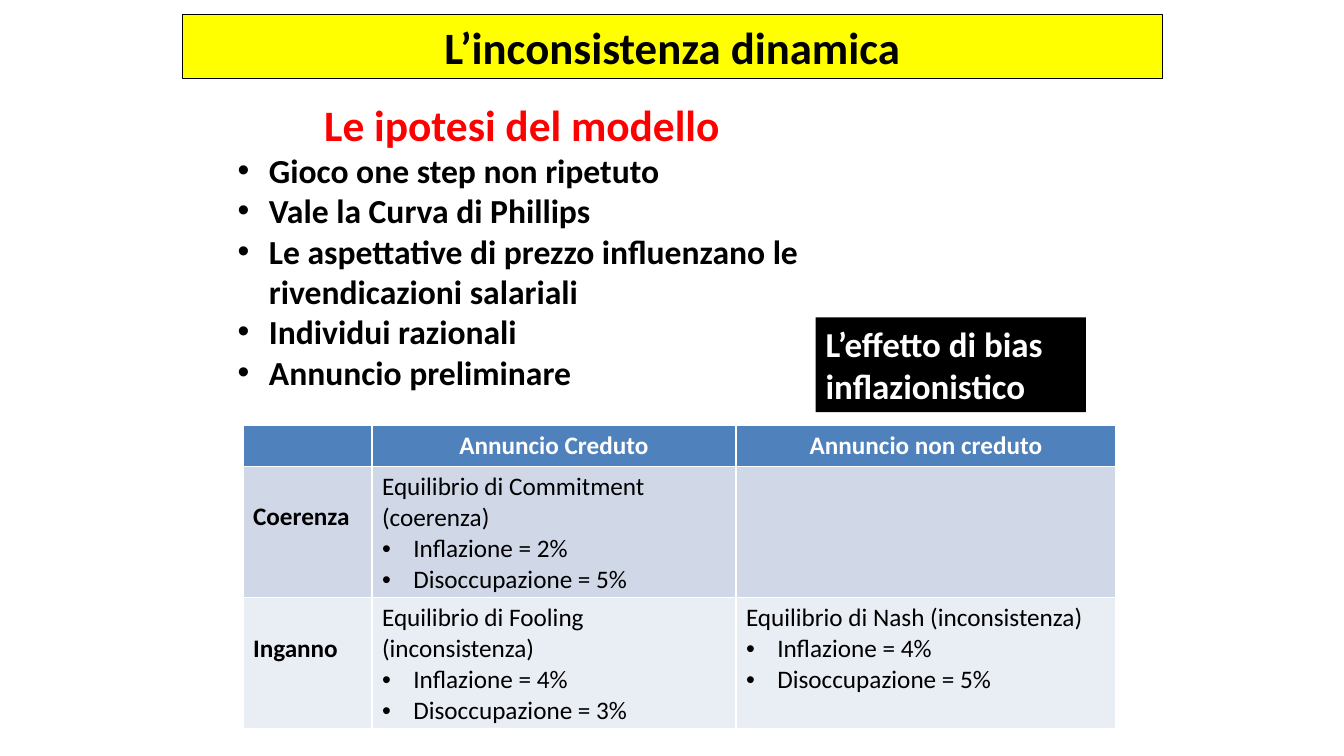
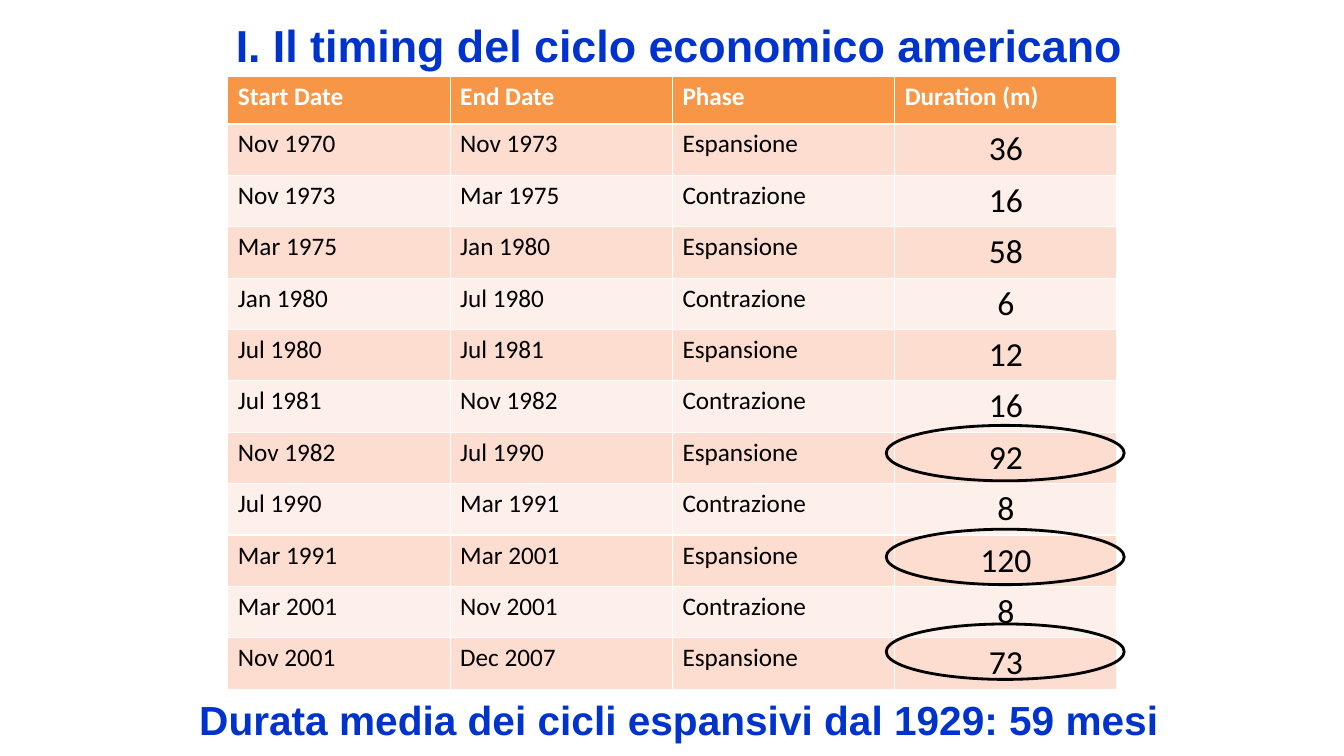
from pptx import Presentation
from pptx import util as u
from pptx.dml import color as dml
from pptx.enum import shapes, text
from pptx.oxml import ns
from lxml import etree

Inches = u.Inches
BLACK, WHITE, RED, BLUE, YELLOW = "000000", "FFFFFF", "FF0000", "0033CC", "FFFF00"
CENTER = text.PP_ALIGN.CENTER


def rgb(hex_color):
    return dml.RGBColor.from_string(hex_color)


def write(frame, words, size, color=BLACK, bold=False, font="Calibri",
          align=text.PP_ALIGN.LEFT, bullet=False):
    """Fill the empty first paragraph of a frame, or append one."""
    paragraph = frame.paragraphs[0]
    if paragraph.runs:
        paragraph = frame.add_paragraph()
    paragraph.alignment = align
    if bullet:
        properties = paragraph._p.get_or_add_pPr()
        properties.set("marL", str(Inches(0.31)))
        properties.set("indent", str(-Inches(0.31)))
        etree.SubElement(properties, ns.qn("a:buFont")).set("typeface", "Arial")
        etree.SubElement(properties, ns.qn("a:buChar")).set("char", "•")
    run = paragraph.add_run()
    run.text = words
    run.font.size = u.Pt(size)
    run.font.name = font
    run.font.bold = bold
    run.font.color.rgb = rgb(color)


presentation = Presentation()
presentation.slide_width, presentation.slide_height = Inches(13.33), Inches(7.5)

# Both slides: a centred bold title
titles = [
    ("L’inconsistenza dinamica", BLACK, "Calibri", (1.81, 0.14, 9.72, 0.64)),
    ("I. Il timing del ciclo economico americano", BLUE, "Arial", (1.86, 0.12, 9.76, 0.64)),
]
for words, color, font, box in titles:
    slide = presentation.slides.add_slide(presentation.slide_layouts[5])
    title = slide.shapes.title
    title.left, title.top, title.width, title.height = map(Inches, box)
    title.text_frame.auto_size = text.MSO_AUTO_SIZE.NONE
    title.text_frame.vertical_anchor = text.MSO_ANCHOR.MIDDLE
    write(title.text_frame, words, 32, color, True, font, CENTER)
model_slide, cycle_slide = presentation.slides

# Slide 1: yellow title band
band = model_slide.shapes.title
band.fill.solid()
band.fill.fore_color.rgb = rgb(YELLOW)
band.line.color.rgb = rgb(BLACK)
band.line.width = u.Pt(0.75)

# Slide 1: assumptions
assumptions = model_slide.shapes.add_textbox(
    Inches(2.26), Inches(0.92), Inches(5.83), Inches(3.05)).text_frame
assumptions.word_wrap = True
write(assumptions, "Le ipotesi del modello", 31, RED, True, align=CENTER)
for words in ("Gioco one step non ripetuto", "Vale la Curva di Phillips",
              "Le aspettative di prezzo influenzano le rivendicazioni salariali",
              "Individui razionali", "Annuncio preliminare"):
    write(assumptions, words, 24, bold=True, bullet=True)

# Slide 1: payoff table, each outcome as (equilibrium, inflation, unemployment)
outcomes = [
    ("Coerenza", [("Equilibrio di Commitment (coerenza)", 2, 5), None], "D0D8E8"),
    ("Inganno", [("Equilibrio di Fooling (inconsistenza)", 4, 3),
                 ("Equilibrio di Nash (inconsistenza)", 4, 5)], "E9EDF4"),
]
payoffs = model_slide.shapes.add_table(
    3, 3, Inches(2.41), Inches(4.22), Inches(8.66), Inches(3.01)).table
for column, width in zip(payoffs.columns, (1.28, 3.61, 3.77)):
    column.width = Inches(width)
for row, height in zip(payoffs.rows, (0.41, 1.3, 1.3)):
    row.height = Inches(height)
for index, words in enumerate(("", "Annuncio Creduto", "Annuncio non creduto")):
    cell = payoffs.cell(0, index)
    cell.fill.solid()
    cell.fill.fore_color.rgb = rgb("4F81BD")
    if words:
        write(cell.text_frame, words, 18, WHITE, True, align=CENTER)
for row_index, (strategy, results, fill) in enumerate(outcomes, 1):
    for cell in payoffs.rows[row_index].cells:
        cell.fill.solid()
        cell.fill.fore_color.rgb = rgb(fill)
    label = payoffs.cell(row_index, 0)
    label.margin_top = Inches(0.35)
    write(label.text_frame, strategy, 18, bold=True)
    for column_index, result in enumerate(results, 1):
        if result:
            equilibrium, inflation, unemployment = result
            frame = payoffs.cell(row_index, column_index).text_frame
            write(frame, equilibrium, 18)
            write(frame, f"Inflazione = {inflation}%", 18, bullet=True)
            write(frame, f"Disoccupazione = {unemployment}%", 18, bullet=True)

# Slide 1: black callout
callout = model_slide.shapes.add_shape(
    shapes.MSO_SHAPE.RECTANGLE, Inches(8.09), Inches(3.15), Inches(2.68), Inches(0.94))
callout.shadow.inherit = False
callout.fill.solid()
callout.fill.fore_color.rgb = rgb(BLACK)
callout.line.fill.background()
callout.text_frame.vertical_anchor = text.MSO_ANCHOR.TOP
write(callout.text_frame, "L’effetto di bias inflazionistico", 25, WHITE, True)

# Slide 2: business cycle table, where each phase starts as the last one ends
turning_points = ["Nov 1970", "Nov 1973", "Mar 1975", "Jan 1980", "Jul 1980", "Jul 1981",
                  "Nov 1982", "Jul 1990", "Mar 1991", "Mar 2001", "Nov 2001", "Dec 2007"]
durations = [36, 16, 58, 6, 12, 16, 92, 8, 120, 8, 73]
cycle_rows = [("Start Date", "End Date", "Phase", "Duration (m)")]
for index, months in enumerate(durations):
    phase = "Contrazione" if index % 2 else "Espansione"
    cycle_rows.append((turning_points[index], turning_points[index + 1], phase, str(months)))

cycles = cycle_slide.shapes.add_table(
    len(cycle_rows), 4, Inches(2.26), Inches(0.76), Inches(8.82), Inches(6.08)).table
for column in cycles.columns:
    column.width = Inches(2.205)
for row_index, values in enumerate(cycle_rows):
    header = row_index == 0
    cycles.rows[row_index].height = Inches(0.47 if header else 0.51)
    fill = "F79646" if header else ("FDEFE9", "FCDDCF")[row_index % 2]
    for column_index, value in enumerate(values):
        cell = cycles.cell(row_index, column_index)
        cell.fill.solid()
        cell.fill.fore_color.rgb = rgb(fill)
        if header:
            write(cell.text_frame, value, 18, WHITE, True)
        elif column_index == 3:
            write(cell.text_frame, value, 24, align=CENTER)
        else:
            write(cell.text_frame, value, 18)

# Slide 2: closing line
closing = cycle_slide.shapes.add_textbox(
    Inches(1.86), Inches(6.84), Inches(9.76), Inches(0.59)).text_frame
closing.word_wrap = True
closing.vertical_anchor = text.MSO_ANCHOR.MIDDLE
write(closing, "Durata media dei cicli espansivi dal 1929: 59 mesi", 29, BLUE, True, "Arial", CENTER)

# Slide 2: rings around the longest expansions
for top in (4.22, 5.25, 6.19):
    ring = cycle_slide.shapes.add_shape(
        shapes.MSO_SHAPE.OVAL, Inches(8.79), Inches(top), Inches(2.36), Inches(0.55))
    ring.shadow.inherit = False
    ring.fill.background()
    ring.line.color.rgb = rgb(BLACK)
    ring.line.width = u.Pt(2)

presentation.save("out.pptx")
